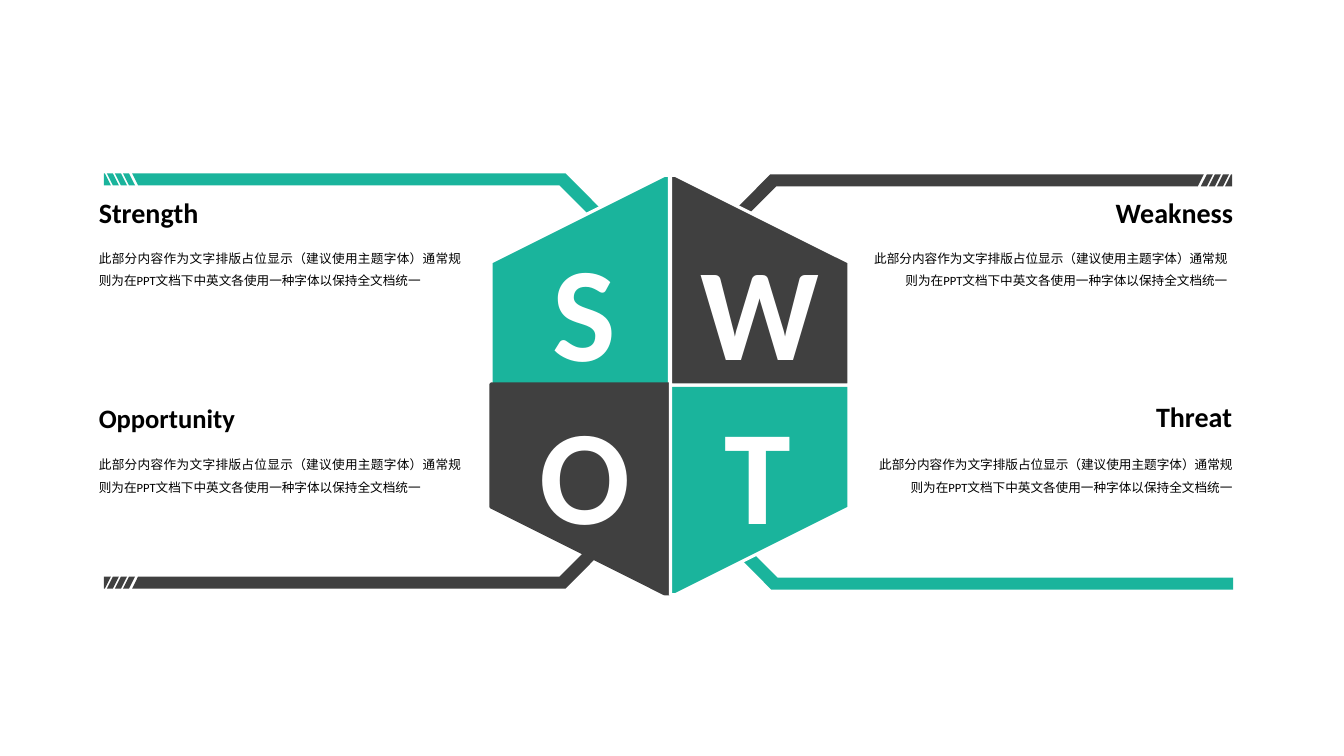
from pptx import Presentation
from pptx.dml.color import RGBColor
from pptx.enum.text import PP_ALIGN
from pptx.util import Pt

PX = 9144  # EMU per px, 100 px to the inch
COLORS = {"teal": "1AB49C", "dark": "404040", "white": "FFFFFF", "black": "000000"}
BODY = "此部分内容作为文字排版占位显示（建议使用主题字体）通常规则为在PPT文档下中英文各使用一种字体以保持全文档统一"

# Outlines as offsets from an anchor; each quadrant mirrors them by direction
BAND = [(28, 0), (458, 0), (561, 104), (561, 207), (551, 207), (551, 111), (452, 12), (34, 12)]
PLAIN_BAND = [(0, 0)] + BAND[1:-1] + [(0, 12)]
STRIPES = [[(x, 0), (x + 6, 0), (x + 12, 12), (x + 6, 12)] for x in (19, 11, 3)]
STRIPES.append([(0, 0), (1, 0), (7, 12), (0, 12)])
PANEL = [(0, 0), (177, 0), (177, 122), (5, 208), (0, 208)]

deck = Presentation()
deck.slide_width, deck.slide_height = 1333 * PX, 750 * PX
page = deck.slides.add_slide(deck.slide_layouts[6])


def add_outline(contours, anchor, direction, fill, line=None):
    """Draw closed contours from an anchor, mirrored by direction (+1 or -1 per axis)."""
    placed = [[(anchor[0] + direction[0] * x, anchor[1] + direction[1] * y) for x, y in contour]
              for contour in contours]
    builder = page.shapes.build_freeform(*placed[0][0], scale=PX)
    builder.add_line_segments(placed[0][1:], close=True)
    for contour in placed[1:]:
        builder.move_to(*contour[0])
        builder.add_line_segments(contour[1:], close=True)
    shape = builder.convert_to_shape()
    shape.shadow.inherit = False
    shape.fill.solid()
    shape.fill.fore_color.rgb = RGBColor.from_string(COLORS[fill])
    if line:
        shape.line.color.rgb = RGBColor.from_string(COLORS[line])
        shape.line.width = Pt(2.25)
    else:
        shape.line.fill.background()


def add_text(text, frame, size, align, color="black", bold=True, spacing=None, inset=0):
    box = page.shapes.add_textbox(*(value * PX for value in frame)).text_frame
    box.word_wrap = True
    box.margin_left = box.margin_right = inset * PX
    box.margin_top = box.margin_bottom = inset // 2 * PX
    para = box.paragraphs[0]
    para.alignment = align
    para.line_spacing = spacing
    span = para.add_run()
    span.text = text
    span.font.name = "Calibri"
    span.font.size = Pt(size)
    span.font.bold = bold
    span.font.color.rgb = RGBColor.from_string(COLORS[color])


striped = [BAND] + STRIPES
# contours, anchor, direction, colour
bands = [
    (striped, (103, 584), (1, -1), "dark"),
    (striped, (103, 172), (1, 1), "teal"),
    (striped, (1222, 173), (-1, 1), "dark"),
    ([PLAIN_BAND], (1223, 585), (-1, -1), "teal"),
]
for band in bands:
    add_outline(*band)

# title, title frame, title size, body left, body top, title and body alignment
topics = [
    ("Strength", (98, 194, 151, 36), 20, 98, 241, PP_ALIGN.LEFT, PP_ALIGN.JUSTIFY),
    ("Opportunity", (98, 399, 207, 36), 19, 98, 446, PP_ALIGN.LEFT, PP_ALIGN.JUSTIFY),
    ("Weakness", (1054, 194, 169, 36), 20, 858, 241, PP_ALIGN.RIGHT, PP_ALIGN.RIGHT),
    ("Threat", (1015, 396, 207, 36), 20, 863, 446, PP_ALIGN.RIGHT, PP_ALIGN.RIGHT),
]
for title, frame, size, left, top, title_align, body_align in topics:
    add_text(title, frame, size, title_align)
    add_text(BODY, (left, top, 359, 132), 9, body_align, bold=False, spacing=1.5)

# letter, panel anchor, direction, fill, line, letter frame, letter size
panels = [
    ("S", (664, 382), (-1, -1), "teal", "white", (487, 220, 186, 181), 96),
    ("O", (664, 381), (-1, 1), "dark", "dark", (487, 382, 186, 181), 96),
    ("T", (665, 382), (1, 1), "teal", "white", (667, 382, 170, 181), 96),
    ("W", (665, 382), (1, -1), "dark", "white", (684, 223, 140, 181), 93.6),
]
for letter, anchor, direction, fill, line, frame, size in panels:
    add_outline([PANEL], anchor, direction, fill, line)
for letter, anchor, direction, fill, line, frame, size in panels:
    add_text(letter, frame, size, PP_ALIGN.CENTER, "white", inset=10)

deck.save("out.pptx")
